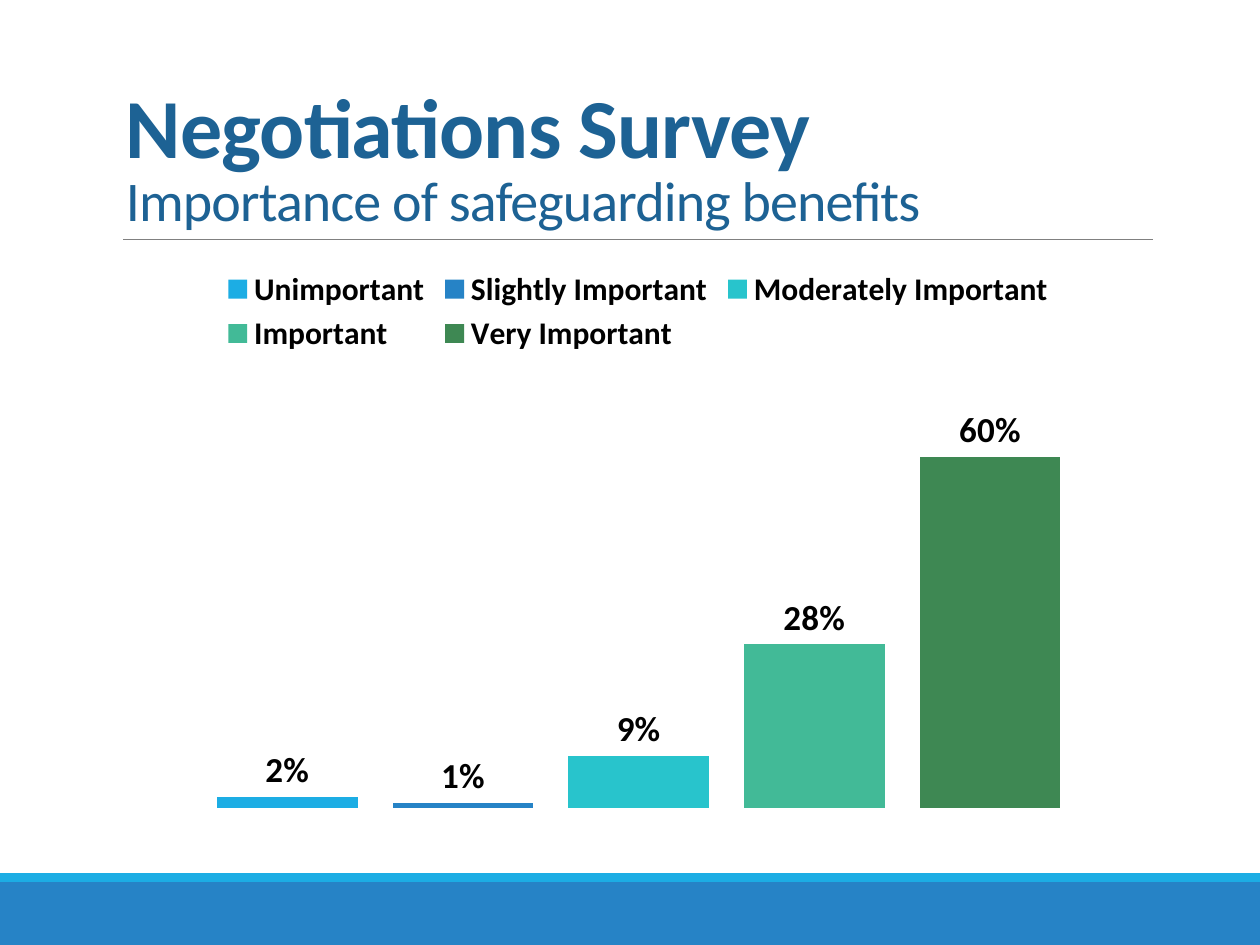
import pptx
import pptx.chart.data
import pptx.dml.color
import pptx.enum.chart
import pptx.enum.shapes
import pptx.enum.text
import pptx.oxml.ns
import pptx.oxml.xmlchemy
import pptx.util
from pptx.util import Inches, Pt

FONT = "Calibri"
TITLE_COLOR = "1D6294"
TITLE_LINES = [("Negotiations Survey", 48, True),
               ("Importance of safeguarding benefits", 32, False)]
ANSWERS = [
    ("Unimportant", 0.02, "1CADE4"),
    ("Slightly Important", 0.01, "2683C6"),
    ("Moderately Important", 0.09, "28C4CC"),
    ("Important", 0.28, "42BA97"),
    ("Very Important", 0.60, "3E8853"),
]
BANDS = [(7, 0.5, "2683C6"), (6.93, 0.07, "1CADE4")]  # top, height, color
PLOT = {"x": 0.031, "y": 0.248, "w": 0.939, "h": 0.71}  # share of the chart


def rgb(color):
    return pptx.dml.color.RGBColor.from_string(color)


def style_font(font, size, bold, color="000000"):
    font.name, font.size, font.bold = FONT, Pt(size), bold
    font.color.rgb = rgb(color)


def add_bands(slide):
    for top, height, color in BANDS:
        sp = slide.shapes.add_shape(
            pptx.enum.shapes.MSO_SHAPE.RECTANGLE,
            0, Inches(top), Inches(10), Inches(height))
        sp.shadow.inherit = False
        sp.fill.solid()
        sp.fill.fore_color.rgb = rgb(color)
        sp.line.fill.background()


def add_rule(slide):
    line = slide.shapes.add_connector(
        pptx.enum.shapes.MSO_CONNECTOR.STRAIGHT,
        Inches(0.98), Inches(1.9), Inches(9.15), Inches(1.9))
    line.line.color.rgb = rgb("808080")
    line.line.width = Pt(0.5)
    line._element.spPr.append(pptx.oxml.xmlchemy.OxmlElement("a:effectLst"))


def add_title(slide):
    tf = slide.shapes.add_textbox(
        Inches(0.9), Inches(0.31), Inches(8.25), Inches(1.59)).text_frame
    tf.word_wrap = True
    tf.vertical_anchor = pptx.enum.text.MSO_ANCHOR.BOTTOM
    p = tf.paragraphs[0]
    p.text = "\v".join(text for text, _, _ in TITLE_LINES)
    p.line_spacing = 0.85
    for r, (_, size, bold) in zip(p.runs, TITLE_LINES):
        style_font(r.font, size, bold, TITLE_COLOR)
        r._r.get_or_add_rPr().set("spc", "-50")


def place_plot(chart):
    """Fix the inner plot area at the PLOT fractions."""
    area = chart._chartSpace.chart.plotArea
    for old in area.findall(pptx.oxml.ns.qn("c:layout")):
        area.remove(old)
    layout = pptx.oxml.xmlchemy.OxmlElement("c:layout")
    manual = pptx.oxml.xmlchemy.OxmlElement("c:manualLayout")
    layout.append(manual)
    settings = [("layoutTarget", "inner"), ("xMode", "edge"), ("yMode", "edge")]
    for tag, value in settings + list(PLOT.items()):
        item = pptx.oxml.xmlchemy.OxmlElement("c:" + tag)
        item.set("val", str(value))
        manual.append(item)
    area.insert(0, layout)


def add_survey_chart(slide):
    data = pptx.chart.data.CategoryChartData(number_format="0%")
    data.categories = ["1"]
    for name, value, _ in ANSWERS:
        data.add_series(name, [value])
    chart = slide.shapes.add_chart(
        pptx.enum.chart.XL_CHART_TYPE.COLUMN_CLUSTERED,
        Inches(0.61), Inches(2.02), Inches(8.91), Inches(4.59), data).chart
    style_font(chart.font, 10, False)
    chart.has_title = False
    chart.has_legend = True
    chart.legend.position = pptx.enum.chart.XL_LEGEND_POSITION.TOP
    chart.legend.include_in_layout = False
    style_font(chart.legend.font, 18, True)

    axis = chart.value_axis
    axis.minimum_scale, axis.maximum_scale = 0, 0.7
    axis.has_major_gridlines = False
    axis.visible = chart.category_axis.visible = False

    plot = chart.plots[0]
    plot.gap_width, plot.overlap = 150, -25
    plot.vary_by_categories = False
    for series, (_, _, color) in zip(plot.series, ANSWERS):
        series.format.fill.solid()
        series.format.fill.fore_color.rgb = rgb(color)
        labels = series.data_labels
        labels.show_value = True
        labels.number_format, labels.number_format_is_linked = "0%", False
        labels.position = pptx.enum.chart.XL_LABEL_POSITION.OUTSIDE_END
        style_font(labels.font, 20, True)
    place_plot(chart)


def main():
    prs = pptx.Presentation()
    prs.slide_width, prs.slide_height = Inches(10), Inches(7.5)
    slide = prs.slides.add_slide(prs.slide_layouts[6])
    add_bands(slide)
    add_rule(slide)
    add_title(slide)
    add_survey_chart(slide)
    prs.save("out.pptx")


if __name__ == "__main__":
    main()
